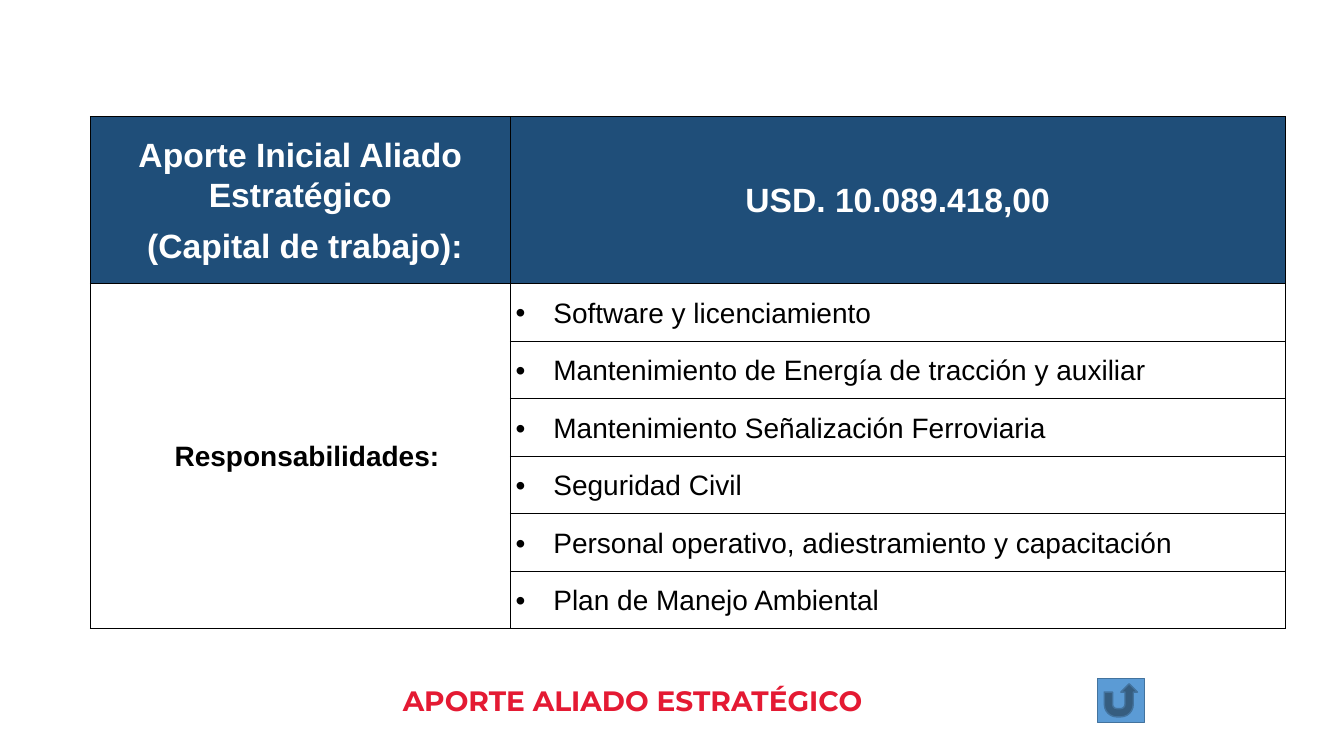
from pptx import Presentation
from pptx.dml.color import RGBColor
from pptx.enum.shapes import MSO_SHAPE
from pptx.enum.text import MSO_ANCHOR, PP_ALIGN
from pptx.oxml import parse_xml
from pptx.oxml.ns import nsdecls
from pptx.util import Emu, Pt

NAVY = RGBColor(0x1F, 0x4E, 0x79)
WHITE = RGBColor(0xFF, 0xFF, 0xFF)
BLACK = RGBColor(0, 0, 0)
RED = RGBColor(0xE4, 0x1A, 0x33)
BLUE = RGBColor(0x5B, 0x9B, 0xD5)
STEEL = RGBColor(0x43, 0x73, 0x9E)

TITLE = "APORTE ALIADO ESTRATÉGICO"
LABEL = ["Aporte Inicial Aliado Estratégico", " (Capital de trabajo):"]
AMOUNT = "USD. 10.089.418,00"
DUTIES = [
    "Software y licenciamiento",
    "Mantenimiento de Energía de tracción y auxiliar",
    "Mantenimiento Señalización Ferroviaria",
    "Seguridad Civil",
    "Personal operativo, adiestramiento y capacitación",
    "Plan de Manejo Ambiental",
]


def px(n):
    """Turn pixels into EMU."""
    return Emu(round(n * 9525))


def write(para, text, size, color, bold, face="Arial"):
    """Add one formatted run."""
    run = para.add_run()
    run.text = text
    font = run.font
    font.name, font.size, font.bold = face, Pt(size), bold
    font.color.rgb = color


def frame(cell):
    """Draw thin black borders around a cell."""
    props = cell._tc.get_or_add_tcPr()
    for side in ("lnL", "lnR", "lnT", "lnB"):
        props.append(parse_xml(
            f'<a:{side} {nsdecls("a")} w="{Pt(0.5)}"><a:solidFill>'
            f'<a:srgbClr val="{BLACK}"/></a:solidFill></a:{side}>'))


def fill(cell, lines, size, color, bold, pad, align=PP_ALIGN.CENTER):
    """Set the text of a cell and return its paragraphs."""
    cell.vertical_anchor = MSO_ANCHOR.MIDDLE
    cell.margin_left = cell.margin_right = px(pad)
    cell.margin_top = cell.margin_bottom = 0
    text = cell.text_frame
    for i, line in enumerate(lines):
        para = text.add_paragraph() if i else text.paragraphs[0]
        para.alignment = align
        para.line_spacing = 1.07
        para.space_after = Pt(8)
        write(para, line, size, color, bold)
    return text.paragraphs


def indent(para, left, first):
    """Set the left margin and first line indent of a paragraph."""
    props = para._p.get_or_add_pPr()
    props.set("marL", str(px(left)))
    props.set("indent", str(px(first)))
    return props


def draw_table(slide, left, top, width, height):
    """Place the table of amount and duties."""
    count, head, label = len(DUTIES), 159, 400
    grid = slide.shapes.add_table(
        count + 1, 2, px(left), px(top), px(width), px(height)).table
    grid.first_row = grid.horz_banding = False
    grid.columns[0].width = px(label)
    grid.columns[1].width = px(width - label)
    for i, row in enumerate(grid.rows):
        row.height = px((height - head) / count if i else head)
        for cell in row.cells:
            frame(cell)
            if i:
                cell.fill.background()
            else:
                cell.fill.solid()
                cell.fill.fore_color.rgb = NAVY
    fill(grid.cell(0, 0), LABEL, 24, WHITE, True, 7)
    fill(grid.cell(0, 1), [AMOUNT], 24, WHITE, True, 7)
    grid.cell(1, 0).merge(grid.cell(count, 0))
    paras = fill(grid.cell(1, 0), ["Responsabilidades:"], 20, BLACK, True, 5)
    indent(paras[0], 0, 13)
    for i, duty in enumerate(DUTIES, 1):
        paras = fill(grid.cell(i, 1), [duty], 20, BLACK, False, 5, PP_ALIGN.LEFT)
        props = indent(paras[0], 36, -36)
        props.append(parse_xml(f'<a:buFont {nsdecls("a")} typeface="Arial"/>'))
        props.append(parse_xml(f'<a:buChar {nsdecls("a")} char="•"/>'))


def draw_title(slide, left, top, width, height):
    """Place the red title below the table."""
    title = slide.shapes.title
    title.left, title.top = px(left), px(top)
    title.width, title.height = px(width), px(height)
    text = title.text_frame
    text.word_wrap = True
    text.vertical_anchor = MSO_ANCHOR.TOP
    para = text.paragraphs[0]
    para.alignment = PP_ALIGN.LEFT
    write(para, TITLE, 20, RED, True, "Montserrat")


def draw_button(slide, left, top, width, height):
    """Place the return button."""
    button = slide.shapes.add_shape(
        MSO_SHAPE.ACTION_BUTTON_RETURN, px(left), px(top), px(width), px(height))
    button.shadow.inherit = False
    button.fill.solid()
    button.fill.fore_color.rgb = BLUE
    button.line.color.rgb = STEEL
    button.line.width = Pt(1)


def main():
    """Build and save the slide."""
    deck = Presentation()
    deck.slide_width, deck.slide_height = px(1280), px(720)
    slide = deck.slides.add_slide(deck.slide_layouts[5])
    draw_table(slide, 86, 111, 1138, 488)
    draw_title(slide, 374, 646, 692, 42)
    draw_button(slide, 1045, 646, 45, 42)
    deck.save("out.pptx")


if __name__ == "__main__":
    main()
